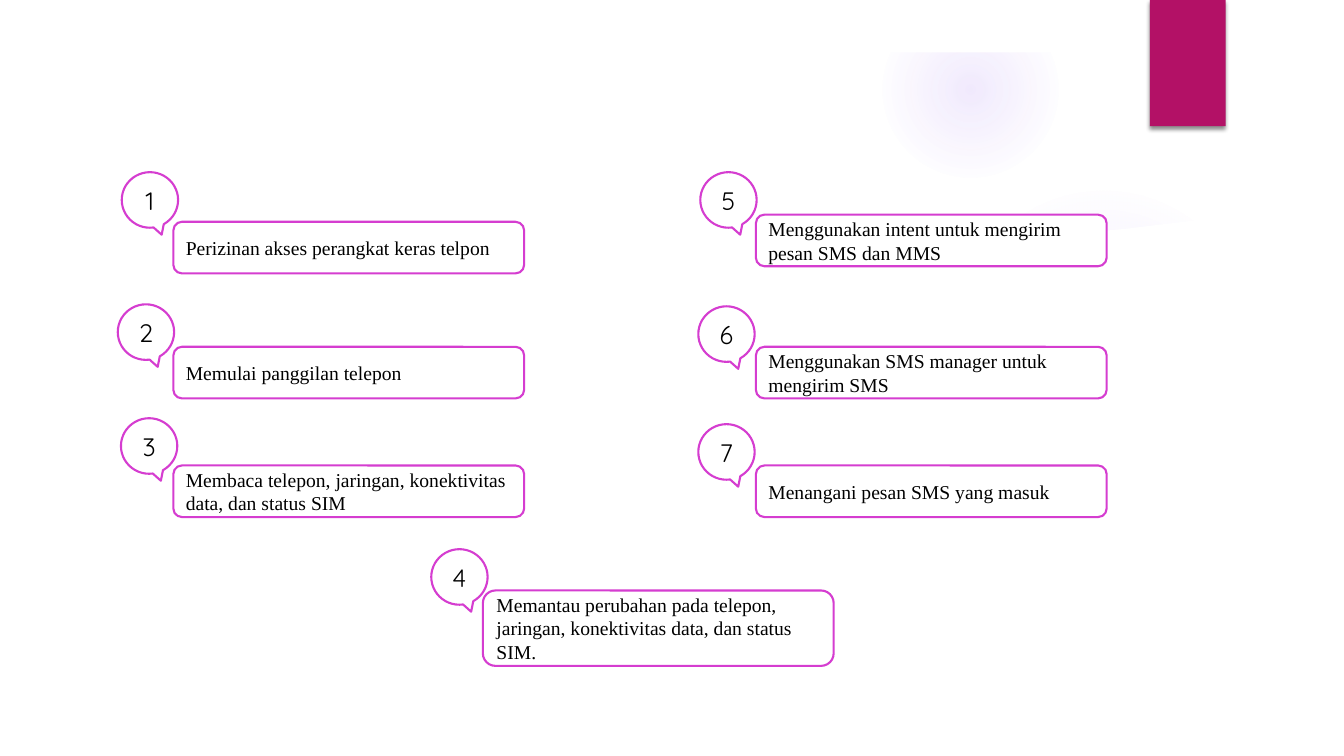
from dataclasses import dataclass

from pptx import Presentation, oxml
from pptx.dml.color import RGBColor
from pptx.enum import shapes, text
from pptx.oxml.ns import nsdecls, qn
from pptx.util import Cm, Pt

# Lengths in cm: number, text, box left and top, bubble left and top
TOPICS = [
    ("1", "Perizinan akses perangkat keras telpon", (4.37, 5.59), (3.07, 4.34)),
    ("2", "Memulai panggilan telepon", (4.37, 8.74), (2.97, 7.67)),
    ("3", "Membaca telepon, jaringan, konektivitas data, dan status SIM",
     (4.37, 11.73), (3.05, 10.54)),
    ("4", "Memantau perubahan pada telepon, jaringan, konektivitas data, "
     "dan status SIM.", (12.17, 14.88), (10.87, 13.84)),
    ("5", "Menggunakan intent untuk mengirim pesan SMS dan MMS",
     (19.05, 5.41), (17.65, 4.34)),
    ("6", "Menggunakan SMS manager untuk mengirim SMS",
     (19.05, 8.74), (17.6, 7.72)),
    ("7", "Menangani pesan SMS yang masuk", (19.05, 11.73), (17.6, 10.69)),
]
TALL = {"4"}
# Left, top, size, then stops as (position %, opacity %)
GLOWS = [
    (23.9, 4.65, 7.82, [(0, 7), (36, 6), (69, 0)]),
    (22.23, 0.03, 4.45, [(0, 14), (36, 7), (73, 0)]),
]
WAVE = [(1.27, 5.18), (4.04, 5.54), (8.15, 5.92), (12.4, 6.17), (17.98, 6.3),
        (22.02, 6.22), (25.5, 6.02), (28.35, 5.77), (30.48, 5.51),
        (32.61, 5.18), (32.61, 17.78), (1.27, 17.78)]
WIDE, HIGH = 33.87, 19.05


@dataclass(frozen=True)
class Theme:
    paper: str = "FFFFFF"
    ink: str = "000000"
    edge: str = "D53DD0"
    tab: str = "B31166"
    glow: str = "9B6BF2"
    body: tuple = ("Times New Roman", 14)
    digit: tuple = ("Quicksand", 18)
    line: float = 1.5


LOOK = Theme()
KIND = shapes.MSO_SHAPE


def paint(shape, fill, edge=None):
    shape.shadow.inherit = False
    shape.fill.solid()
    shape.fill.fore_color.rgb = RGBColor.from_string(fill)
    if edge:
        shape.line.color.rgb = RGBColor.from_string(edge)
        shape.line.width = Pt(LOOK.line)
    else:
        shape.line.fill.background()
    return shape


def add(slide, kind, left, top, wide, high, fill=LOOK.paper, edge=None):
    place = map(Cm, (left, top, wide, high))
    return paint(slide.shapes.add_shape(kind, *place), fill, edge)


def write(shape, words, font, align):
    frame = shape.text_frame
    frame.word_wrap = True
    frame.vertical_anchor = text.MSO_ANCHOR.MIDDLE
    para = frame.paragraphs[0]
    para.alignment = align
    run = para.add_run()
    run.text = words
    run.font.name, size = font
    run.font.size = Pt(size)
    run.font.color.rgb = RGBColor.from_string(LOOK.ink)


def add_glow(slide, left, top, size, stops):
    """Draw a disc that fades out from its centre."""
    disc = add(slide, KIND.OVAL, left, top, size, size)
    marks = "".join(
        f'<a:gs pos="{pos * 1000}"><a:srgbClr val="{LOOK.glow}">'
        f'<a:alpha val="{alpha * 1000}"/></a:srgbClr></a:gs>'
        for pos, alpha in stops)
    fade = oxml.parse_xml(
        f'<a:gradFill {nsdecls("a")}><a:gsLst>{marks}</a:gsLst>'
        '<a:path path="circle"><a:fillToRect l="50000" t="50000" '
        'r="50000" b="50000"/></a:path></a:gradFill>')
    props = disc.element.spPr
    props.replace(props.find(qn("a:solidFill")), fade)


def add_tab(slide):
    tab = add(slide, KIND.RECTANGLE, 28.98, 0, 1.91, 3.18, LOOK.tab)
    shade = oxml.parse_xml(
        f'<a:outerShdw {nsdecls("a")} blurRad="{Pt(3)}" dist="{Pt(2)}" '
        f'dir="5400000"><a:srgbClr val="{LOOK.ink}"><a:alpha val="45000"/>'
        '</a:srgbClr></a:outerShdw>')
    tab.element.spPr.find(qn("a:effectLst")).append(shade)


def add_back(slide):
    for glow in GLOWS:
        add_glow(slide, *glow)
    edge = [(Cm(x), Cm(y)) for x, y in WAVE]
    pen = slide.shapes.build_freeform(*edge[0], scale=1.0)
    pen.add_line_segments(edge[1:], close=True)
    paint(pen.convert_to_shape(), LOOK.paper)
    add(slide, KIND.RECTANGLE, 0, 0, WIDE, 1.32)
    add_tab(slide)


def add_topic(slide, num, words, box, bubble):
    high = 1.9 if num in TALL else 1.3
    card = add(slide, KIND.ROUNDED_RECTANGLE, *box, 8.84, high, edge=LOOK.edge)
    write(card, words, LOOK.body, text.PP_ALIGN.LEFT)
    call = add(slide, KIND.OVAL_CALLOUT, *bubble, 1.42, 1.4, edge=LOOK.edge)
    call.element.spPr.find(qn("a:xfrm")).set("flipH", "1")
    frame = call.text_frame
    frame.margin_left = frame.margin_right = 0
    write(call, num, LOOK.digit, text.PP_ALIGN.CENTER)


def main():
    deck = Presentation()
    deck.slide_width, deck.slide_height = Cm(WIDE), Cm(HIGH)
    slide = deck.slides.add_slide(deck.slide_layouts[6])
    add_back(slide)
    for topic in TOPICS:
        add_topic(slide, *topic)
    deck.save("out.pptx")


if __name__ == "__main__":
    main()
